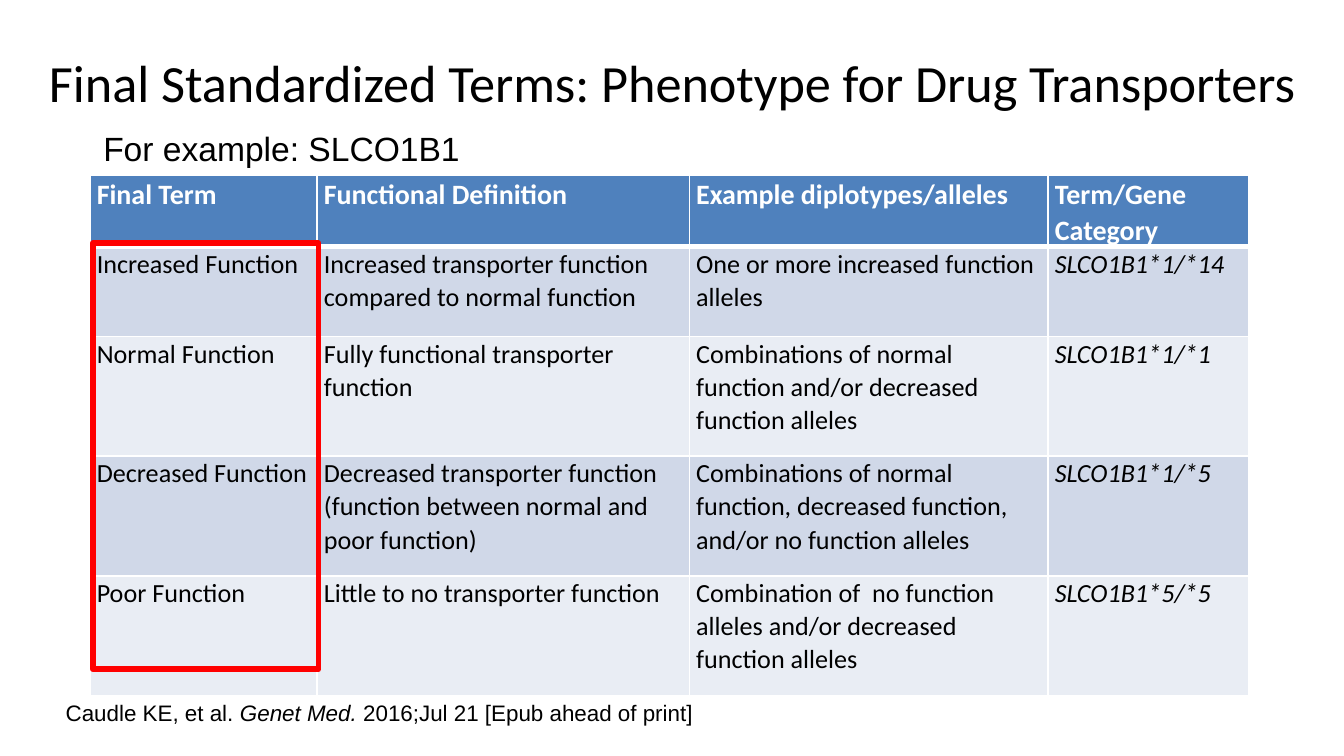
import lxml.etree
import pptx
import pptx.dml.color
import pptx.enum.shapes
import pptx.enum.text
import pptx.oxml.ns
import pptx.util
from pptx.util import Inches

HEADINGS = ["Final Term", "Functional Definition", "Example diplotypes/alleles", "Term/Gene Category"]
PHENOTYPES = [
    ["Increased Function", "Increased transporter function compared to normal function",
     "One or more increased function alleles", "SLCO1B1*1/*14"],
    ["Normal Function", "Fully functional transporter function",
     "Combinations of normal function and/or decreased function alleles", "SLCO1B1*1/*1"],
    ["Decreased Function", "Decreased transporter function (function between normal and poor function)",
     "Combinations of normal function, decreased function, and/or no function alleles", "SLCO1B1*1/*5"],
    ["Poor Function", "Little to no transporter function",
     "Combination of  no function alleles and/or decreased function alleles", "SLCO1B1*5/*5"],
]
SLIDE_WIDTH = 10
COLUMN_WIDTHS = [1.69, 2.77, 2.67, 1.49]
ROW_HEIGHTS = [0.5, 0.67, 0.89, 0.89, 0.89]
HEADER_FILL = "4F81BD"
BAND_FILLS = ["D0D8E8", "E9EDF4"]


def color(value):
    """Return the colour for a hex string."""
    return pptx.dml.color.RGBColor.from_string(value)


def add_run(paragraph, text, size, font="Calibri", ink="000000", bold=False, italic=False):
    """Append one formatted run to a paragraph."""
    run = paragraph.add_run()
    run.text = text
    run.font.name = font
    run.font.size = pptx.util.Pt(size)
    run.font.bold = bold
    run.font.italic = italic
    run.font.color.rgb = color(ink)


def add_text_box(slide, box, wrap=True):
    """Add a text box and return its text frame."""
    frame = slide.shapes.add_textbox(*map(Inches, box)).text_frame
    frame.word_wrap = wrap
    return frame


def set_border(cell, side, points):
    """Give one side of a cell a white border."""
    line = lxml.etree.SubElement(cell._tc.get_or_add_tcPr(), pptx.oxml.ns.qn(f"a:ln{side}"),
                                 w=str(pptx.util.Pt(points)))
    fill = lxml.etree.SubElement(line, pptx.oxml.ns.qn("a:solidFill"))
    lxml.etree.SubElement(fill, pptx.oxml.ns.qn("a:srgbClr"), val="FFFFFF")


def fill_cell(cell, text, row, column):
    """Write and style one cell according to its place in the table."""
    header = row == 0
    cell.margin_left = cell.margin_right = Inches(0.05)
    cell.margin_top = Inches(0.01 if header else 0)
    cell.margin_bottom = 0
    for side in "LRTB":
        below_header = (row, side) in [(0, "B"), (1, "T")]
        set_border(cell, side, 3 if below_header else 1)
    cell.fill.solid()
    cell.fill.fore_color.rgb = color(HEADER_FILL if header else BAND_FILLS[(row - 1) % 2])
    paragraph = cell.text_frame.paragraphs[0]
    paragraph.line_spacing = 1.05
    paragraph.space_before = pptx.util.Pt(6)
    if header:
        add_run(paragraph, text, 15, ink="FFFFFF", bold=True)
    else:
        add_run(paragraph, text, 14, italic=column == len(HEADINGS) - 1)


def add_title(slide, box):
    """Place the centred slide title."""
    frame = add_text_box(slide, box)
    frame.vertical_anchor = pptx.enum.text.MSO_ANCHOR.MIDDLE
    paragraph = frame.paragraphs[0]
    paragraph.alignment = pptx.enum.text.PP_ALIGN.CENTER
    add_run(paragraph, "Final Standardized Terms: Phenotype for Drug Transporters", 28)


def add_phenotype_table(slide, box):
    """Place the table of terms with the gene example above it and a frame on its terms."""
    left, top, width, height = box
    rows = [HEADINGS] + PHENOTYPES
    table = slide.shapes.add_table(len(rows), len(HEADINGS), *map(Inches, box)).table
    for column, column_width in zip(table.columns, COLUMN_WIDTHS):
        column.width = Inches(column_width)
    for row, row_height in zip(table.rows, ROW_HEIGHTS):
        row.height = Inches(row_height)
    for row, texts in enumerate(rows):
        for column, text in enumerate(texts):
            fill_cell(table.cell(row, column), text, row, column)

    example = add_text_box(slide, (left, top - 0.4, 2.88, 0.4), wrap=False)
    add_run(example.paragraphs[0], "For example: SLCO1B1", 18, "Arial")

    term_frame = slide.shapes.add_shape(
        pptx.enum.shapes.MSO_SHAPE.RECTANGLE,
        *map(Inches, (left + 0.02, top + 0.51, COLUMN_WIDTHS[0] - 0.01, 3.17)))
    term_frame.shadow.inherit = False
    term_frame.fill.background()
    term_frame.line.color.rgb = color("FF0000")
    term_frame.line.width = pptx.util.Pt(3)


def add_citation(slide, box):
    """Place the source citation."""
    paragraph = add_text_box(slide, box).paragraphs[0]
    add_run(paragraph, "Caudle KE, et al. ", 12, "Arial")
    add_run(paragraph, "Genet Med.", 12, "Arial", italic=True)
    add_run(paragraph, " 2016;Jul 21 [Epub ahead of print]", 12, "Arial")


def main():
    """Build and save the slide."""
    deck = pptx.Presentation()
    deck.slide_width = Inches(SLIDE_WIDTH)
    deck.slide_height = Inches(SLIDE_WIDTH * 9 / 16)
    slide = deck.slides.add_slide(deck.slide_layouts[6])
    add_title(slide, (0, 0.06, SLIDE_WIDTH, 1.09))
    add_phenotype_table(slide, (0.67, 1.3, sum(COLUMN_WIDTHS), sum(ROW_HEIGHTS)))
    add_citation(slide, (0.39, 5.15, 7.01, 0.3))
    deck.save("out.pptx")


if __name__ == "__main__":
    main()
